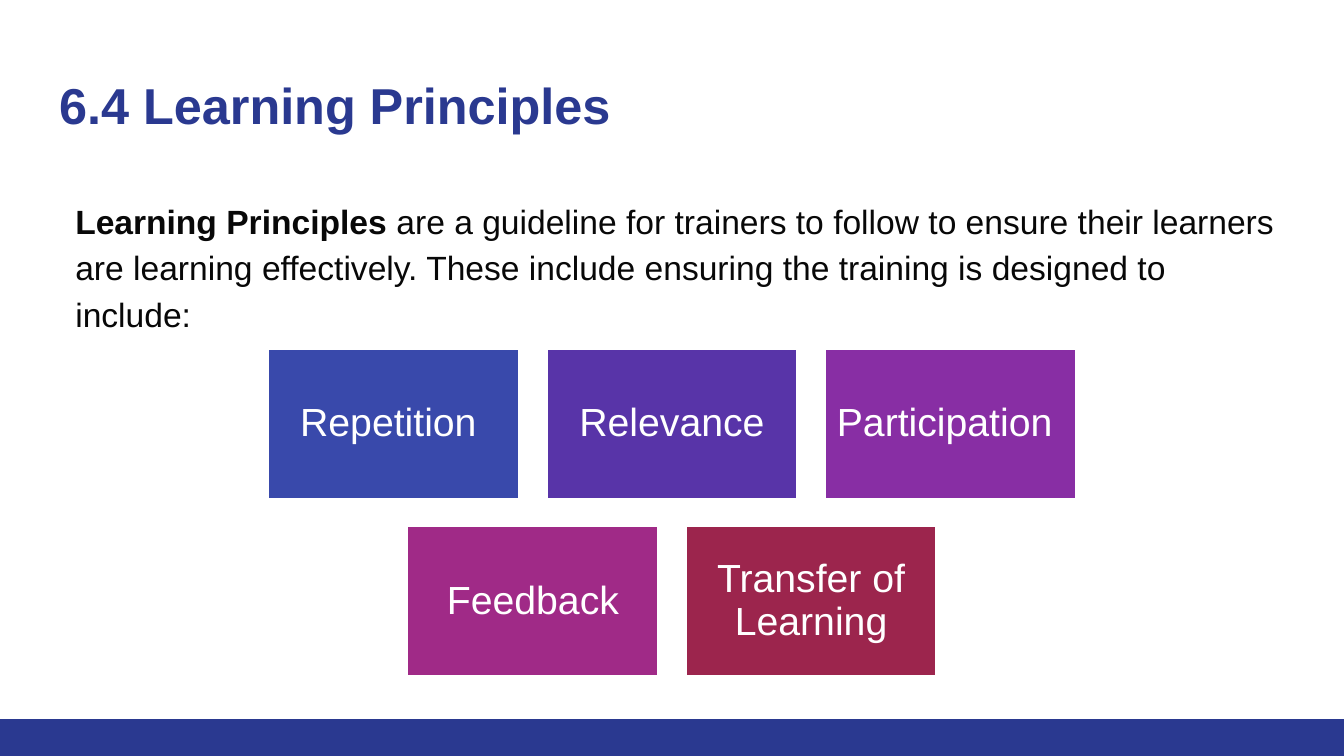
import pptx
import pptx.util
import pptx.dml.color
import pptx.enum.shapes
import pptx.enum.text
import lxml.etree

Inches = pptx.util.Inches
Pt = pptx.util.Pt
WIDE = 10
HIGH = WIDE * 9 / 16
NAVY, BLACK, WHITE = "2A3990", "080808", "FFFFFF"

# Card size and the step from one card to the next
CARD_W, CARD_H = 1.88, 1.13
STEP_X, STEP_Y = 2.07, 1.32
CARD_TOP = 2.59
ROWS = [
    [("Repetition ", "3949AB"), ("Relevance", "5834A8"), ("Participation ", "882EA4")],
    [("Feedback", "A02A87"), ("Transfer of Learning", "9C254D")],
]


def color(code):
    return pptx.dml.color.RGBColor.from_string(code)


def add_text(para, text, size=18, ink=BLACK, bold=False):
    run = para.add_run()
    run.text = text
    font = run.font
    font.name, font.size, font.bold = "Arial", Pt(size), bold
    font.color.rgb = color(ink)


def set_frame(frame, inset, anchor):
    frame.word_wrap = True
    frame.auto_size = pptx.enum.text.MSO_AUTO_SIZE.NONE
    frame.vertical_anchor = anchor
    frame.margin_left = frame.margin_right = Inches(inset)
    frame.margin_top = frame.margin_bottom = Inches(inset)


def set_para(para, align, space):
    para.alignment = align
    para.line_spacing = space
    para.space_before = para.space_after = Pt(0)


def add_rect(slide, left, top, width, height, fill, edge=None):
    kind = pptx.enum.shapes.MSO_SHAPE.RECTANGLE
    rect = slide.shapes.add_shape(
        kind, Inches(left), Inches(top), Inches(width), Inches(height))
    rect.shadow.inherit = False
    rect.fill.solid()
    rect.fill.fore_color.rgb = color(fill)
    if edge:
        rect.line.color.rgb = color(edge)
        rect.line.width = Pt(2)
    else:
        rect.line.fill.background()
    return rect


def place_holder(holder, top, height, space):
    """Move a placeholder and return its first paragraph."""
    holder.left, holder.top = Inches(0.34), Inches(top)
    holder.width, holder.height = Inches(9.32), Inches(height)
    set_frame(holder.text_frame, 0.1, pptx.enum.text.MSO_ANCHOR.TOP)
    para = holder.text_frame.paragraphs[0]
    set_para(para, pptx.enum.text.PP_ALIGN.LEFT, space)
    return para


def clear_bullet(para, indent):
    props = para._p.get_or_add_pPr()
    props.set("marL", str(Inches(indent)))
    props.set("indent", "0")
    lxml.etree.SubElement(props, pptx.oxml.ns.qn("a:buNone"))


def add_card(slide, left, top, label, fill):
    card = add_rect(slide, left, top, CARD_W, CARD_H, fill, WHITE)
    set_frame(card.text_frame, 0.09, pptx.enum.text.MSO_ANCHOR.MIDDLE)
    para = card.text_frame.paragraphs[0]
    set_para(para, pptx.enum.text.PP_ALIGN.CENTER, 0.9)
    add_text(para, label, size=21, ink=WHITE)


def main():
    deck = pptx.Presentation()
    deck.slide_width, deck.slide_height = Inches(WIDE), Inches(HIGH)
    slide = deck.slides.add_slide(deck.slide_layouts[1])

    # Footer bar
    add_rect(slide, 0, 5.35, WIDE, HIGH - 5.35, NAVY)

    # Title
    title = place_holder(slide.shapes.title, 0.45, 0.66, 1.0)
    add_text(title, "6.4 Learning Principles", size=27, ink=NAVY, bold=True)

    # Introduction
    intro = place_holder(slide.placeholders[1], 1.35, 3.65, 1.15)
    clear_bullet(intro, 0.12)
    add_text(intro, "Learning Principles", bold=True)
    add_text(intro, " are a guideline for trainers to follow to ensure their "
             "learners are learning effectively. These include ensuring the "
             "training is designed to include:")

    # Cards, each row centred on the slide
    for row, cards in enumerate(ROWS):
        start = (WIDE - CARD_W - (len(cards) - 1) * STEP_X) / 2
        for col, (label, fill) in enumerate(cards):
            add_card(slide, start + col * STEP_X, CARD_TOP + row * STEP_Y, label, fill)

    deck.save("out.pptx")


if __name__ == "__main__":
    main()
